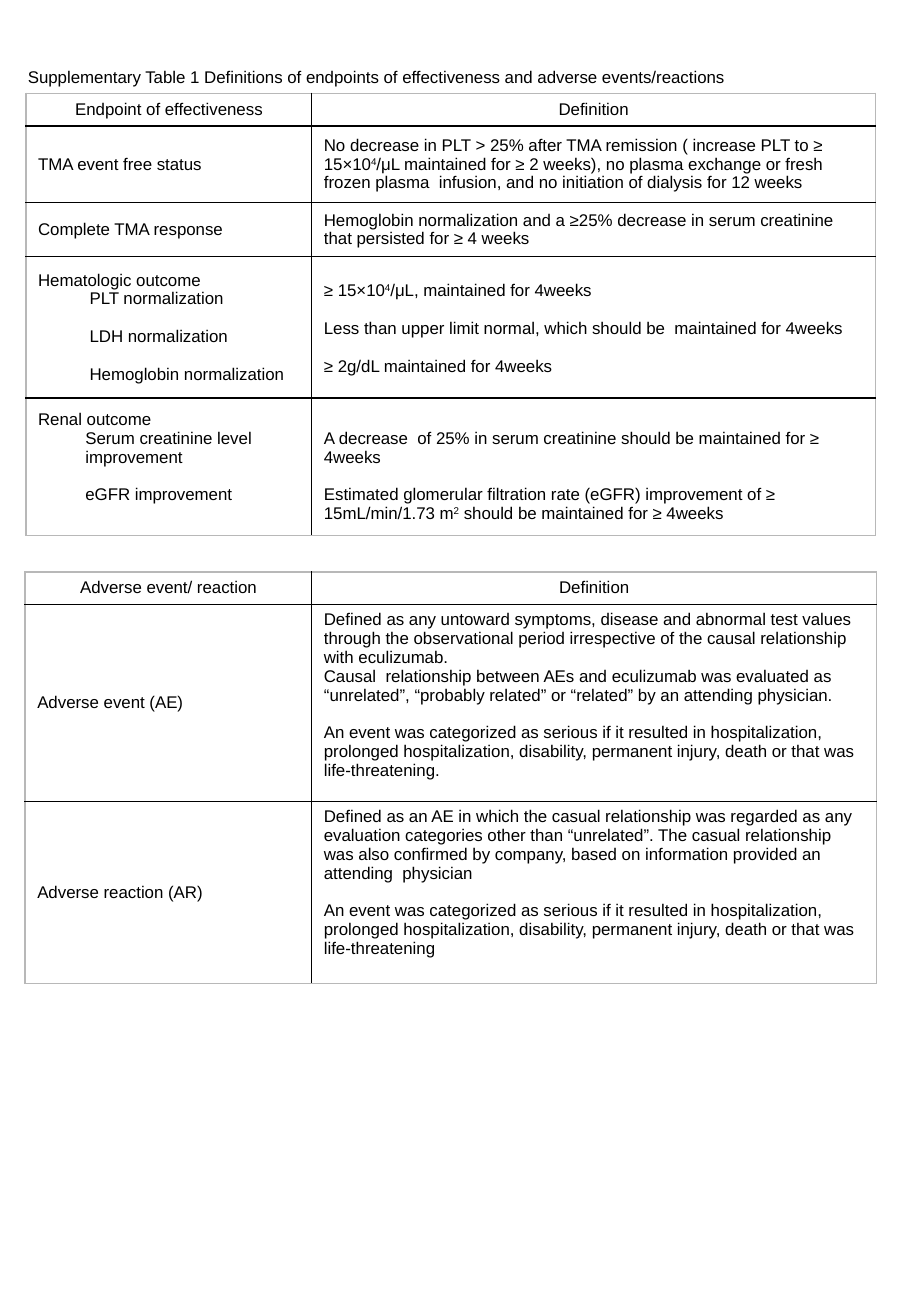
from lxml import etree
from pptx import Presentation
from pptx.dml.color import RGBColor
from pptx.enum.text import MSO_ANCHOR as Anchor, PP_ALIGN as Align
from pptx.oxml import parse_xml
from pptx.util import Pt

COLORS = {"text": "000000", "inner": "000000", "outer": "B8B8B8", "paper": "FFFFFF"}
NS = "http://schemas.openxmlformats.org/drawingml/2006/main"
FONT, SIZE = "Arial", 10
LINE = 11.15
PAD = 3.6
OUTCOME_INDENT, RENAL_INDENT = 30.5, 28


def entry(*lines, anchor=Anchor.MIDDLE, top=PAD, bottom=PAD):
    return lines, anchor, top, bottom


def write(paragraph, text):
    for part, piece in enumerate(text.split("^")):
        run = paragraph.add_run()
        run.text = piece
        run.font.name = FONT
        run.font.size = Pt(SIZE)
        run.font.color.rgb = RGBColor.from_string(COLORS["text"])
        if part % 2:
            run._r.get_or_add_rPr().set("baseline", "30000")


serious = (
    "An event was categorized as serious if it resulted in hospitalization, prolonged "
    "hospitalization, disability, permanent injury, death or that was life-threatening"
)

effectiveness = [
    (19.4, entry(("Endpoint of effectiveness", 0, 0)), entry(("Definition", 0, 0))),
    (45.4, entry(("TMA event free status", 0, 0)), entry(
        ("No decrease in PLT > 25% after TMA remission ( increase PLT to ≥ 15×10^4^/μL "
         "maintained for ≥ 2 weeks), no plasma exchange or fresh frozen plasma  infusion, "
         "and no initiation of dialysis for 12 weeks", 0, 0))),
    (32.1, entry(("Complete TMA response", 0, 0)), entry(
        ("Hemoglobin normalization and a ≥25% decrease in serum creatinine "
         "that persisted for ≥ 4 weeks", 0, 0))),
    (83.8,
     entry(("Hematologic outcome", 0, 0),
           ("PLT normalization", OUTCOME_INDENT, 0),
           ("LDH normalization", OUTCOME_INDENT, LINE),
           ("Hemoglobin normalization", OUTCOME_INDENT, LINE)),
     entry(("≥ 15×10^4^/μL, maintained for 4weeks", 0, 0),
           ("Less than upper limit normal, which should be  maintained for 4weeks", 0, LINE),
           ("≥ 2g/dL maintained for 4weeks", 0, LINE),
           anchor=Anchor.TOP, top=PAD + LINE)),
    (81.4,
     entry(("Renal outcome", 0, 0),
           ("Serum creatinine level", RENAL_INDENT, 0),
           ("improvement", RENAL_INDENT, 0),
           ("eGFR improvement", RENAL_INDENT, LINE), bottom=PAD + LINE),
     entry(("A decrease  of 25% in serum creatinine should be maintained for ≥ 4weeks", 0, 0),
           ("Estimated glomerular filtration rate (eGFR) improvement of ≥ 15mL/min/1.73 m^2^ "
            "should be maintained for ≥ 4weeks", 0, LINE), top=PAD + LINE)),
]

adverse = [
    (19, entry(("Adverse event/ reaction", 0, 0)), entry(("Definition", 0, 0))),
    (116.8, entry(("Adverse event (AE)", 0, 0)), entry(
        ("Defined as any untoward symptoms, disease and abnormal test values through the "
         "observational period irrespective of the causal relationship with eculizumab.", 0, 0),
        ("Causal  relationship between AEs and eculizumab was evaluated as “unrelated”, "
         "“probably related” or “related” by an attending physician.", 0, 0),
        (serious + ".", 0, LINE), anchor=Anchor.TOP)),
    (108, entry(("Adverse reaction (AR)", 0, 0)), entry(
        ("Defined as an AE in which the casual relationship was regarded as any evaluation "
         "categories other than “unrelated”. The casual relationship was also confirmed by "
         "company, based on information provided an attending  physician", 0, 0),
        (serious, 0, LINE), anchor=Anchor.TOP)),
]

deck = Presentation()
deck.slide_width, deck.slide_height = Pt(540), Pt(780)
slide = deck.slides.add_slide(deck.slide_layouts[6])

caption = slide.shapes.add_textbox(Pt(9.4), Pt(36), Pt(481.7), Pt(19.4)).text_frame
caption.word_wrap = True
write(caption.paragraphs[0], "Supplementary Table 1 Definitions of endpoints of "
                             "effectiveness and adverse events/reactions")

for left, top, widths, rows in (
    (15.4, 55.3, (169.4, 334.2), effectiveness),
    (14.9, 339, (169.9, 334.8), adverse),
):
    table = slide.shapes.add_table(
        len(rows), 2, Pt(left), Pt(top), Pt(sum(widths)), Pt(sum(row[0] for row in rows))
    ).table
    table.first_row = table.horz_banding = False
    for column, width in zip(table.columns, widths):
        column.width = Pt(width)
    for r, (height, *entries) in enumerate(rows):
        table.rows[r].height = Pt(height)
        for c, (lines, anchor, pad_top, pad_bottom) in enumerate(entries):
            cell = table.cell(r, c)
            cell.vertical_anchor = anchor
            cell.margin_top, cell.margin_bottom = Pt(pad_top), Pt(pad_bottom)
            cell.fill.solid()
            cell.fill.fore_color.rgb = RGBColor.from_string(COLORS["paper"])
            for n, (text, indent, gap) in enumerate(lines):
                frame = cell.text_frame
                paragraph = frame.add_paragraph() if n else frame.paragraphs[0]
                paragraph.alignment = Align.LEFT if r else Align.CENTER
                if indent:
                    properties = paragraph._p.get_or_add_pPr()
                    properties.set("marL", str(Pt(indent)))
                    properties.set("indent", "0")
                if gap:
                    paragraph.space_before = Pt(gap)
                write(paragraph, text)
            edges = {"L": c == 0, "R": c == 1, "T": r == 0, "B": r == len(rows) - 1}
            for place, (side, is_outer) in enumerate(edges.items()):
                color = COLORS["outer" if is_outer else "inner"]
                cell._tc.get_or_add_tcPr().insert(place, parse_xml(
                    f'<a:ln{side} xmlns:a="{NS}" w="{Pt(1)}"><a:solidFill>'
                    f'<a:srgbClr val="{color}"/></a:solidFill></a:ln{side}>'))

deck.save("out.pptx")
